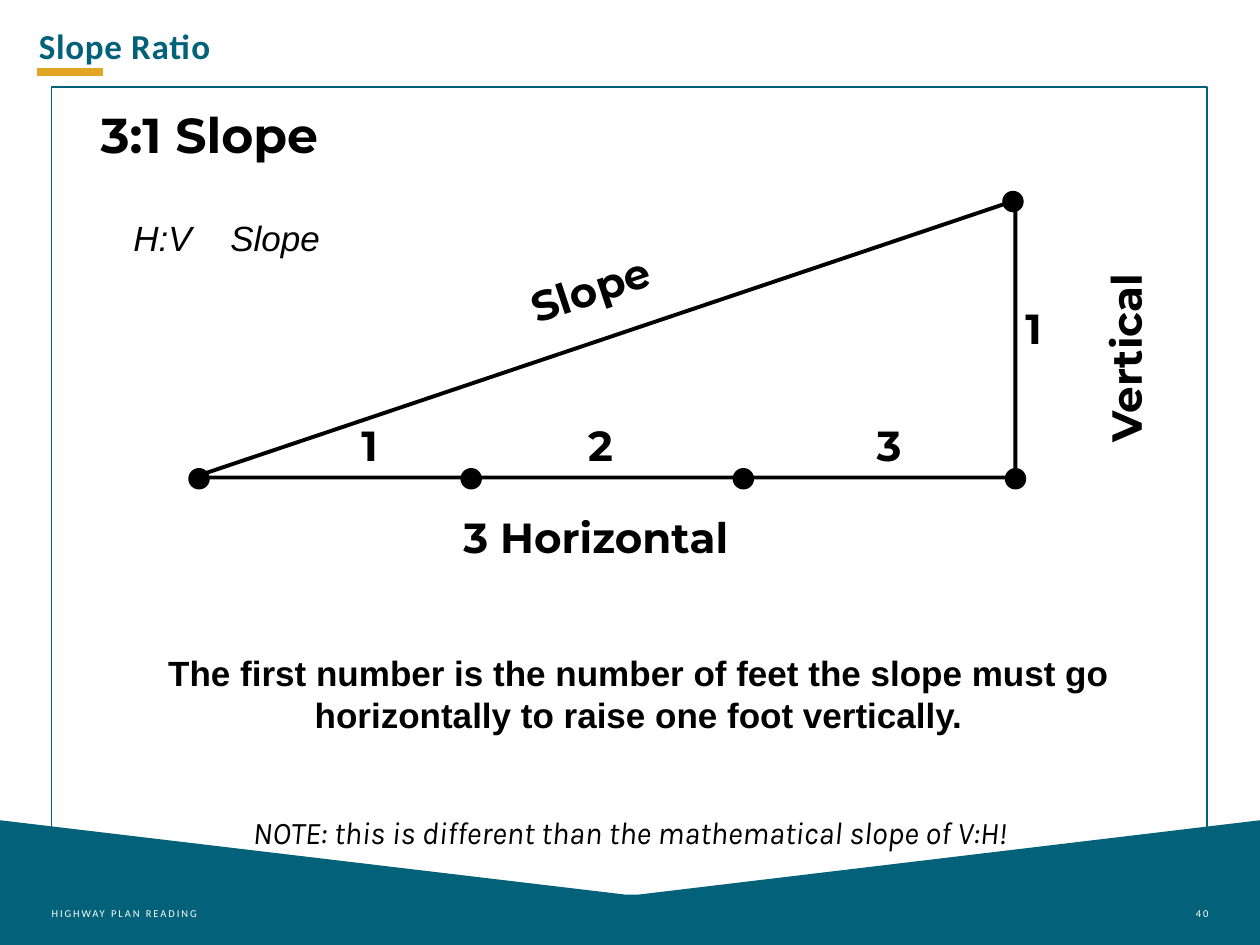
import pptx
import pptx.util
import pptx.dml.color
import pptx.enum.shapes
import pptx.enum.text
import pptx.oxml.ns
import lxml.etree
from dataclasses import dataclass

Inches = pptx.util.Inches
Pt = pptx.util.Pt
Kind = pptx.enum.shapes.MSO_SHAPE
Align = pptx.enum.text.PP_ALIGN
Anchor = pptx.enum.text.MSO_ANCHOR
qn = pptx.oxml.ns.qn


@dataclass(frozen=True)
class Theme:
    teal: str = "03617A"
    gold: str = "E0A624"
    black: str = "000000"
    white: str = "FFFFFF"
    tiny: float = 6
    note: float = 18
    body: float = 20
    label: float = 24
    head: float = 28


THEME = Theme()


def color(code):
    return pptx.dml.color.RGBColor.from_string(code)


class Page:
    def __init__(self, theme, slide):
        self.theme = theme
        self.slide = slide

    def paint(self, shape, fill=None, line=None, width=1):
        shape.shadow.inherit = False
        if fill:
            shape.fill.solid()
            shape.fill.fore_color.rgb = color(fill)
        else:
            shape.fill.background()
        if line:
            shape.line.color.rgb = color(line)
            shape.line.width = Pt(width)
        else:
            shape.line.fill.background()
        return shape

    def shape(self, kind, box, **look):
        item = self.slide.shapes.add_shape(kind, *map(Inches, box))
        return self.paint(item, **look)

    def outline(self, points, **look):
        spots = [(Inches(x), Inches(y)) for x, y in points]
        pen = self.slide.shapes.build_freeform(*spots[0])
        pen.add_line_segments(spots[1:], close=True)
        return self.paint(pen.convert_to_shape(), **look)

    def line(self, start, end, tint, width):
        item = self.slide.shapes.add_connector(
            pptx.enum.shapes.MSO_CONNECTOR.STRAIGHT, *map(Inches, start + end))
        item.line.color.rgb = color(tint)
        item.line.width = Pt(width)
        lxml.etree.SubElement(item._element.spPr, qn("a:effectLst"))

    def text(self, words, box, font, wrap=True, turn=0, track=0, tab=None,
             frame=None, para=None):
        item = self.slide.shapes.add_textbox(*map(Inches, box))
        item.rotation = turn
        body = item.text_frame
        first = body.paragraphs[0]
        if tab:
            stops = lxml.etree.SubElement(
                first._p.get_or_add_pPr(), qn("a:tabLst"))
            lxml.etree.SubElement(
                stops, qn("a:tab"), pos=str(Inches(tab)), algn="l")
        run = first.add_run()
        run.text = words
        look = dict(font)
        run.font.color.rgb = color(look.pop("tint", self.theme.black))
        if track:
            run.font._element.set("spc", str(round(track * 100)))
        groups = ((body, {"word_wrap": wrap, **(frame or {})}),
                  (first, para or {}), (run.font, look))
        for target, values in groups:
            for name, value in values.items():
                setattr(target, name, value)


def main():
    deck = pptx.Presentation()
    deck.slide_width, deck.slide_height = Inches(10), Inches(7.5)
    page = Page(THEME, deck.slides.add_slide(deck.slide_layouts[6]))

    page.outline([(10, 6.51), (10, 7.5), (0, 7.5), (0, 6.51),
                  (4.96, 7.1), (5.07, 7.1)], fill=THEME.teal)
    page.shape(Kind.RECTANGLE, (0.41, 0.69, 9.17, 6.66), line=THEME.teal)

    small = {"name": "Calibri", "size": Pt(THEME.tiny), "tint": THEME.white}
    low = {"vertical_anchor": Anchor.BOTTOM, "margin_left": 0,
           "margin_right": 0}
    for words, left, width, side in (
            ("HIGHWAY PLAN READING", 0.41, 2.67, Align.LEFT),
            ("40", 8.62, 0.97, Align.RIGHT)):
        page.text(words, (left, 6.95, width, 0.4), small, track=1.1,
                  frame=low, para={"alignment": side})

    page.text("Slope Ratio", (0.21, 0.11, 7.54, 0.47),
              {"name": "Calibri", "size": Pt(THEME.body), "bold": True,
               "tint": THEME.teal}, track=0.4,
              frame={"vertical_anchor": Anchor.BOTTOM},
              para={"line_spacing": 0.9})
    page.line((0.29, 0.57), (0.82, 0.57), THEME.gold, 4.5)

    center = {"alignment": Align.CENTER}
    page.text("NOTE: this is different than the mathematical slope of V:H!",
              (0.97, 6.4, 8.06, 0.4),
              {"name": "Karla", "size": Pt(THEME.note), "italic": True},
              para=center)

    strong = {"name": "Montserrat", "size": Pt(THEME.label), "bold": True}
    page.text("3:1 Slope", (0.7, 0.78, 2.19, 0.57),
              {**strong, "size": Pt(THEME.head)}, wrap=False)

    wedge = page.shape(Kind.RIGHT_TRIANGLE, (1.53, 1.59, 6.53, 2.2),
                       line=THEME.black, width=2.25)
    wedge._element.spPr.xfrm.set("flipH", "1")

    dot, base, step = 0.16, 3.72, 2.16
    spots = [(1.5 + step * i, base) for i in range(4)] + [(7.96, 1.52)]
    for left, top in spots:
        page.shape(Kind.FLOWCHART_CONNECTOR, (left, top, dot, dot),
                   fill=THEME.black, line=THEME.black, width=0.75)

    for words, left, top, width, turn in (
            ("1", 2.77, 3.28, 0.43, 0),
            ("2", 4.57, 3.28, 0.43, 0),
            ("3", 6.86, 3.28, 0.43, 0),
            ("Slope", 4.1, 2.03, 1.23, -18.4),
            ("3 Horizontal", 3.58, 4.01, 2.42, 0),
            ("1", 8.04, 2.35, 0.43, 0),
            ("Vertical", 8.1, 2.53, 1.66, 270)):
        page.text(words, (left, top, width, 0.5), strong, wrap=False,
                  turn=turn)

    plain = {"name": "Arial", "size": Pt(THEME.body)}
    page.text("The first number is the number of feet the slope must go "
              "horizontally to raise one foot vertically.",
              (0.94, 5.12, 8.26, 0.77), {**plain, "bold": True}, para=center)
    page.text("H:V\tSlope", (0.96, 1.67, 1.7, 0.44),
              {**plain, "italic": True}, tab=0.77)

    deck.save("out.pptx")


if __name__ == "__main__":
    main()
